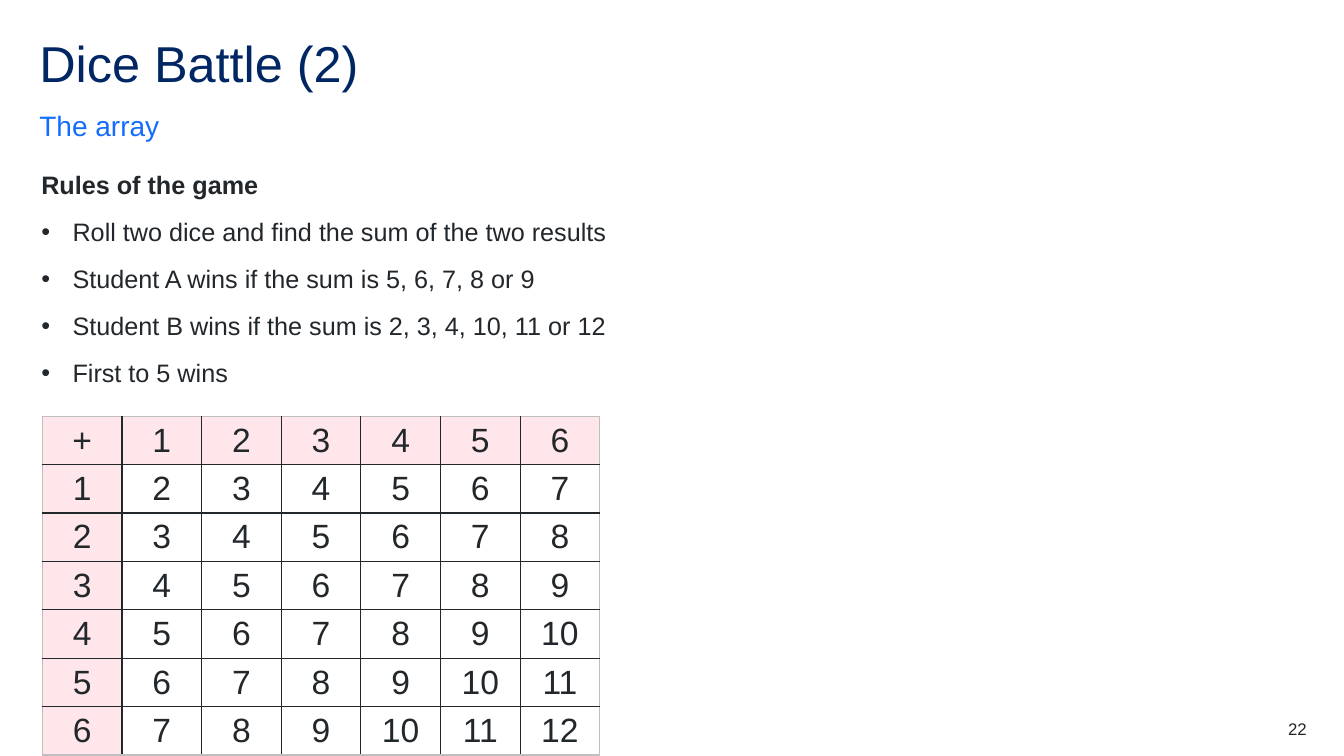
from lxml import etree
from pptx import Presentation
from pptx.dml.color import RGBColor
from pptx.enum.text import MSO_ANCHOR as Anchor, PP_ALIGN as Align
from pptx.oxml.ns import qn
from pptx.util import Inches, Pt

NAVY, BLUE, INK = "002664", "146CFD", "22272B"
PINK, GREY = "FFE6EA", "BFBFBF"


def rgb(value):
    return RGBColor.from_string(value)


class SlideBuilder:
    """Holds the font and current slide and adds styled elements to it."""

    def __init__(self, s, font="Arial"):
        self.s = s
        self.font = font

    def run(self, p, text, size, color=INK, bold=False):
        r = p.add_run()
        r.text = text
        r.font.name = self.font
        r.font.size = Pt(size)
        r.font.bold = bold
        r.font.color.rgb = rgb(color)

    def bullet(self, p):
        pPr = p._p.get_or_add_pPr()
        pPr.set("marL", str(Inches(0.31)))
        pPr.set("indent", str(-Inches(0.31)))
        font = etree.SubElement(pPr, qn("a:buFont"))
        font.set("typeface", self.font)
        etree.SubElement(pPr, qn("a:buChar")).set("char", "•")

    def text(self, box, lines, size, color=INK, spacing=1.0, after=0,
             align=Align.LEFT, anchor=Anchor.TOP):
        sp = self.s.shapes.add_textbox(*map(Inches, box))
        tf = sp.text_frame
        tf.word_wrap = True
        tf.vertical_anchor = anchor
        tf.margin_left = tf.margin_right = tf.margin_top = tf.margin_bottom = 0
        for i, (line, bold, bulleted) in enumerate(lines):
            p = tf.add_paragraph() if i else tf.paragraphs[0]
            p.alignment = align
            p.line_spacing = spacing
            p.space_after = Pt(after)
            if bulleted:
                self.bullet(p)
            self.run(p, line, size, color, bold)

    def border(self, cell, side, color):
        ln = etree.SubElement(cell._tc.get_or_add_tcPr(), qn(f"a:ln{side}"))
        ln.set("w", str(Pt(1)))
        fill = etree.SubElement(ln, qn("a:solidFill"))
        etree.SubElement(fill, qn("a:srgbClr")).set("val", color)

    def sum_table(self, left, top, faces, col_width, row_height):
        n = faces + 1
        frame = self.s.shapes.add_table(
            n, n, Inches(left), Inches(top),
            Inches(n * col_width), Inches(n * row_height))
        table = frame.table
        table.first_row = table.horz_banding = False
        for k in range(n):
            table.columns[k].width = Inches(col_width)
            table.rows[k].height = Inches(row_height)
        for row in range(n):
            for col in range(n):
                cell = table.cell(row, col)
                cell.vertical_anchor = Anchor.MIDDLE
                cell.margin_top = cell.margin_bottom = Inches(0.04)
                outer = {"L": col == 0, "R": col == faces,
                         "T": row == 0, "B": row == faces}
                for side, is_outer in outer.items():
                    self.border(cell, side, GREY if is_outer else INK)
                if row and col:
                    cell.fill.background()
                else:
                    cell.fill.solid()
                    cell.fill.fore_color.rgb = rgb(PINK)
                p = cell.text_frame.paragraphs[0]
                p.alignment = Align.CENTER
                self.run(p, str(row + col) if row + col else "+", 24)


def main():
    prs = Presentation()
    prs.slide_width, prs.slide_height = Inches(13.33), Inches(7.5)
    s = prs.slides.add_slide(prs.slide_layouts[6])
    b = SlideBuilder(s)
    b.text((0.39, 0.39, 12.56, 0.6), [("Dice Battle (2)", False, False)],
           36, NAVY, spacing=0.9)
    b.text((0.39, 1.07, 12.56, 0.34), [("The array", False, False)],
           20, BLUE, spacing=1.5, after=12, anchor=Anchor.BOTTOM)
    rules = ["Roll two dice and find the sum of the two results",
             "Student A wins if the sum is 5, 6, 7, 8 or 9",
             "Student B wins if the sum is 2, 3, 4, 10, 11 or 12",
             "First to 5 wins"]
    b.text((0.41, 1.51, 12.29, 2.67),
           [("Rules of the game", True, False)]
           + [(rule, False, True) for rule in rules], 18, spacing=1.56)
    b.sum_table(0.42, 4.13, 6, 0.79, 0.47)
    b.text((12.17, 7.13, 0.79, 0.2), [("22", False, False)], 12,
           align=Align.RIGHT)
    prs.save("out.pptx")


if __name__ == "__main__":
    main()
